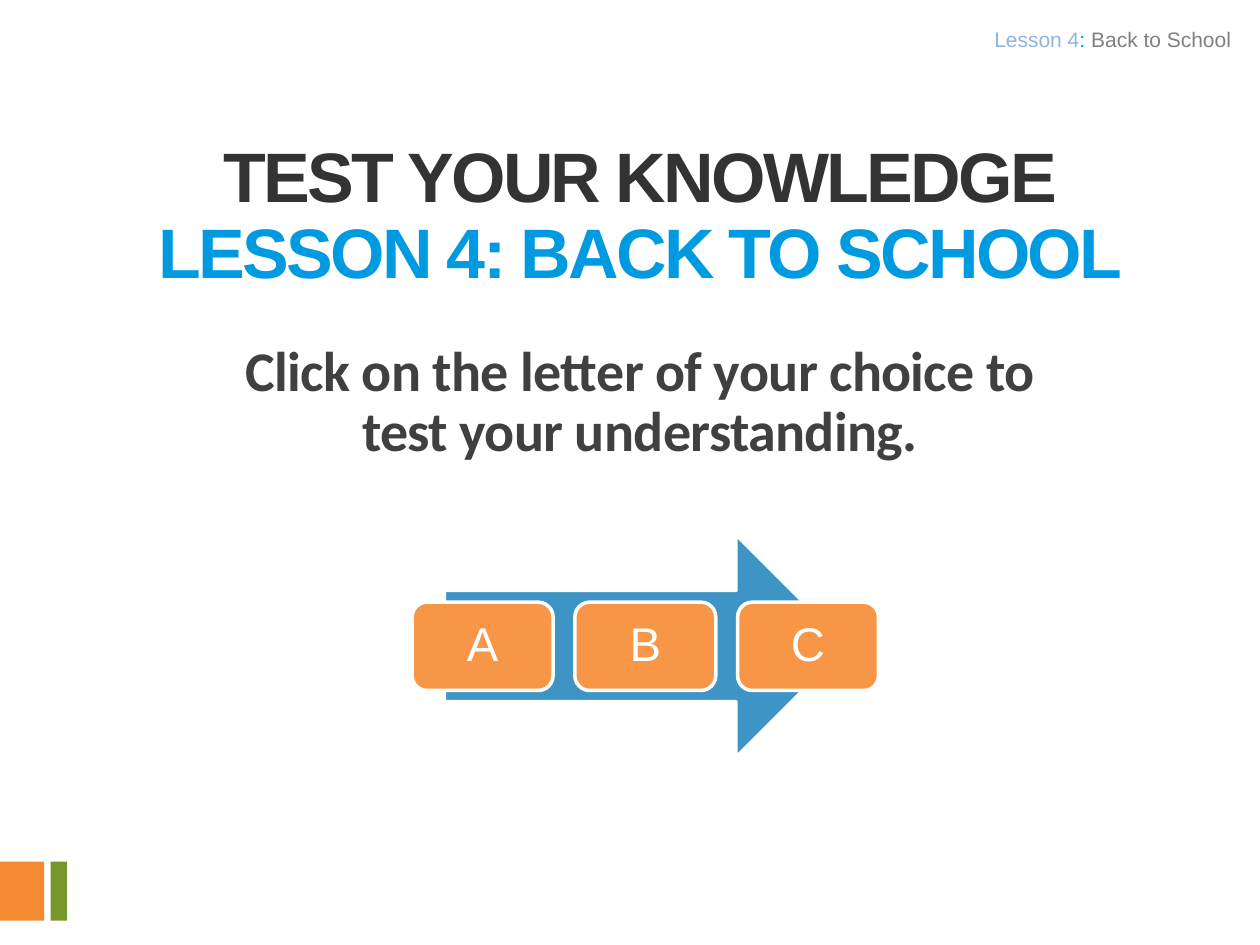
from dataclasses import dataclass
from pptx import Presentation
from pptx.dml.color import RGBColor
from pptx.enum.shapes import MSO_SHAPE as SHAPE
from pptx.enum.text import MSO_ANCHOR as ANCHOR, MSO_AUTO_SIZE as FIT, PP_ALIGN as ALIGN
from pptx.util import Cm, Pt


@dataclass(frozen=True)
class Theme:
    """Colours, fonts and type sizes of the deck."""
    orange: str = "F38A31"
    green: str = "77972B"
    dark: str = "333333"
    blue: str = "009AE1"
    text: str = "404040"
    arrow: str = "3E94C4"
    card: str = "F79646"
    white: str = "FFFFFF"
    pale: str = "8EB4E3"
    grey: str = "808080"
    font: str = "Arial"
    body_font: str = "Calibri"
    title_size: int = 40
    body_size: int = 32
    card_size: int = 27
    header_size: int = 12


class Deck:
    """Holds the theme and the current slide."""

    def __init__(self, prs, theme):
        """Start a slide on the title layout."""
        self.t = theme
        self.s = prs.slides.add_slide(prs.slide_layouts[0])

    def run(self, p, text, size, color, font=None, bold=False, spacing=0):
        """Add one formatted run."""
        r = p.add_run()
        r.text = text
        f = r.font
        f.name, f.size, f.bold = font or self.t.font, Pt(size), bold
        f.color.rgb = RGBColor.from_string(color)
        if spacing:
            r._r.get_or_add_rPr().set("spc", str(round(spacing * 100)))

    def shape(self, kind, box, fill, line=0, parent=None):
        """Add a filled preset shape."""
        sp = (parent or self.s).shapes.add_shape(kind, *map(Cm, box))
        sp.shadow.inherit = False
        sp.fill.solid()
        sp.fill.fore_color.rgb = RGBColor.from_string(fill)
        if line:
            sp.line.width = Pt(line)
            sp.line.color.rgb = RGBColor.from_string(self.t.white)
        else:
            sp.line.fill.background()
        return sp

    def placeholder(self, sp, box, fit=FIT.NONE):
        """Move a placeholder and return its centred paragraph."""
        sp.left, sp.top, sp.width, sp.height = map(Cm, box)
        tf = sp.text_frame
        tf.word_wrap, tf.auto_size, tf.vertical_anchor = True, fit, ANCHOR.TOP
        p = tf.paragraphs[0]
        p.alignment, p.line_spacing, p.space_before = ALIGN.CENTER, 0.9, Pt(0)
        return p

    def title(self, first, second, box):
        """Fill the title with two coloured lines."""
        p = self.placeholder(self.s.shapes.title, box)
        self.run(p, first, self.t.title_size, self.t.dark, bold=True, spacing=-1.5)
        p.add_line_break()
        self.run(p, second, self.t.title_size, self.t.blue, bold=True, spacing=-1.5)

    def body(self, text, box):
        """Fill the body with one sentence."""
        p = self.placeholder(self.s.placeholders[1], box, FIT.SHAPE_TO_FIT_TEXT)
        self.run(p, text, self.t.body_size, self.t.text, self.t.body_font, True, -0.4)

    def header(self, parts, box):
        """Add the right-aligned running header."""
        tf = self.s.shapes.add_textbox(*map(Cm, box)).text_frame
        tf.word_wrap = True
        tf.margin_left = tf.margin_right = Cm(0.2)
        tf.margin_top = tf.margin_bottom = Cm(0.1)
        p = tf.paragraphs[0]
        p.alignment = ALIGN.RIGHT
        for text, color in parts:
            self.run(p, text, self.t.header_size, color)

    def choices(self, letters, left, top, pitch):
        """Add the arrow with one card per letter."""
        grp = self.s.shapes.add_group_shape()
        self.shape(SHAPE.RIGHT_ARROW, (8.97, 10.8, 8.1, 4.45), self.t.arrow, 1.5, grp)
        for i, letter in enumerate(letters):
            box = (left + i * pitch, top, 2.84, 1.78)
            sp = self.shape(SHAPE.ROUNDED_RECTANGLE, box, self.t.card, 2, grp)
            tf = sp.text_frame
            tf.vertical_anchor = ANCHOR.MIDDLE
            p = tf.paragraphs[0]
            p.alignment, p.line_spacing = ALIGN.CENTER, 0.9
            self.run(p, letter, self.t.card_size, self.t.white)


def main():
    """Build and save the slide."""
    prs = Presentation()
    prs.slide_width, prs.slide_height = Cm(25.4), Cm(19.05)
    t = Theme()
    deck = Deck(prs, t)
    for left, width, color in ((0, 0.89, t.orange), (1.02, 0.33, t.green)):
        deck.shape(SHAPE.RECTANGLE, (left, 17.37, width, 1.19), color)
    deck.title("TEST YOUR KNOWLEDGE", "LESSON 4: BACK TO SCHOOL", (2.11, 2.74, 21.59, 4.09))
    deck.choices("ABC", 8.31, 12.14, 3.28)
    deck.body("Click on the letter of your choice to test your understanding.",
              (4.01, 6.78, 17.78, 2.97))
    deck.header((("Lesson 4", t.pale), (": ", t.blue), ("Back to School", t.grey)),
                (10.16, 0.43, 14.86, 0.81))
    prs.save("out.pptx")


if __name__ == "__main__":
    main()
